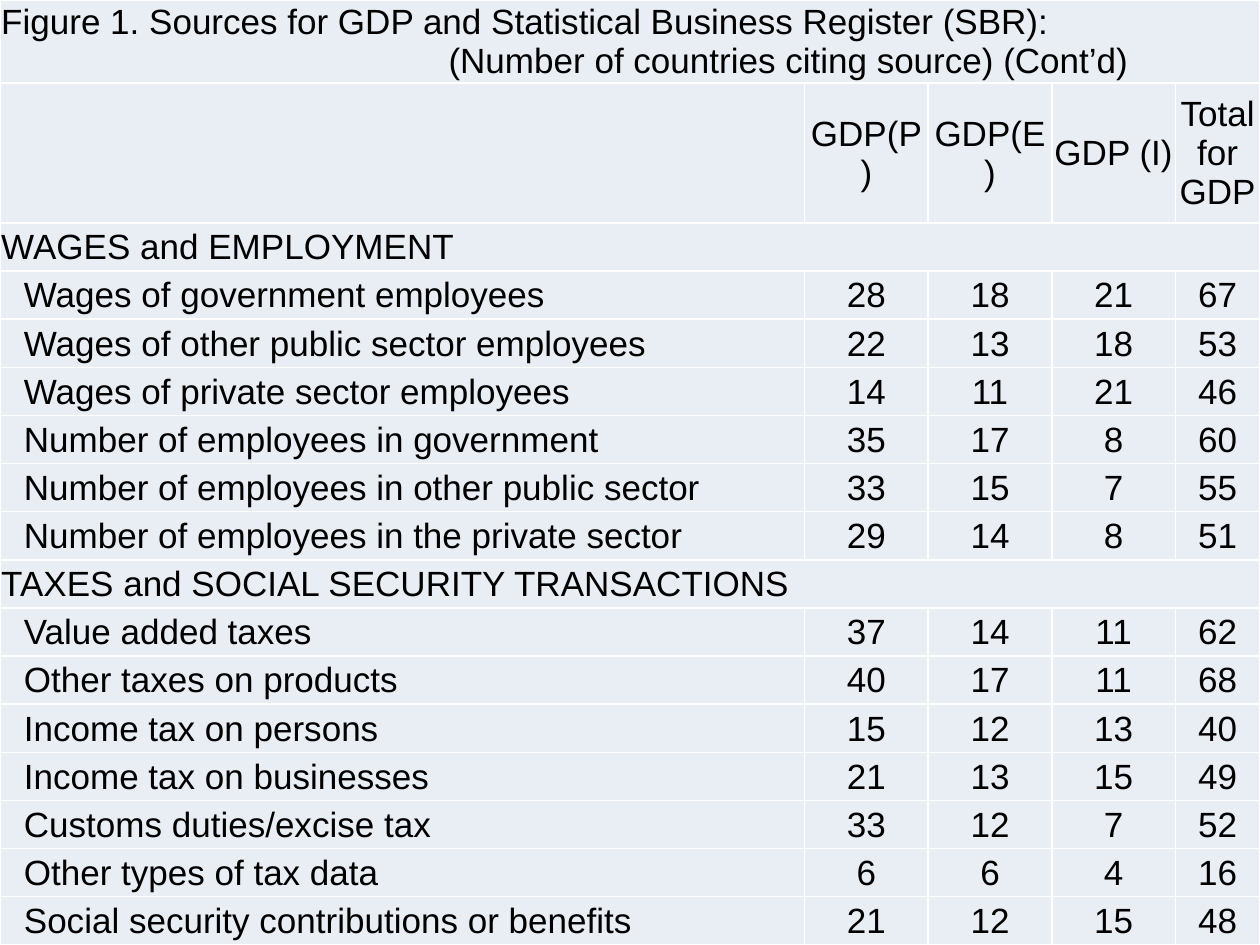
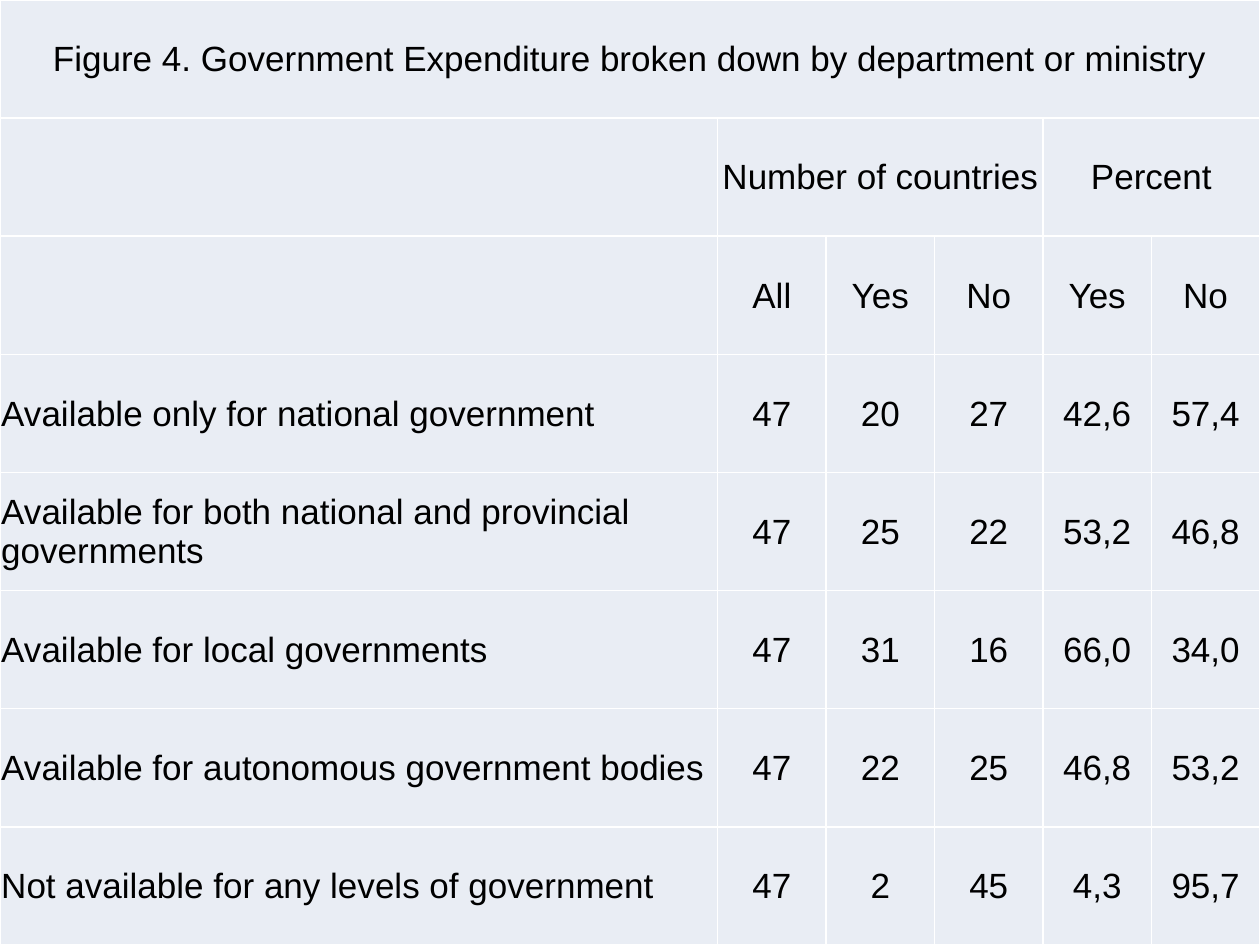
from lxml import etree
from pptx import Presentation, util as u
from pptx.dml.color import RGBColor
from pptx.enum import text
from pptx.oxml.ns import qn

WIDTH, HEIGHT = u.Inches(10), u.Inches(7.5)
FULL_SLIDE = (0, 0, WIDTH, HEIGHT)
PALE, WHITE, BLACK = "E9EDF4", "FFFFFF", "000000"
FONT, SIZE, RULE = "Arial", u.Pt(20), u.Pt(1)
INSET, ITEM_INDENT = u.Inches(0.01), u.Inches(0.19)
LEFT, CENTER = text.PP_ALIGN.LEFT, text.PP_ALIGN.CENTER

SOURCE_TITLE = ("Figure 1. Sources for GDP and Statistical Business Register (SBR):",
                "(Number of countries citing source) (Cont’d)")
SOURCE_HEADS = ("GDP(P)", "GDP(E)", "GDP (I)", "Total for GDP")
SOURCE_GROUPS = {
    "WAGES and EMPLOYMENT": [
        ("Wages of government employees", 28, 18, 21, 67),
        ("Wages of other public sector employees", 22, 13, 18, 53),
        ("Wages of private sector employees", 14, 11, 21, 46),
        ("Number of employees in government", 35, 17, 8, 60),
        ("Number of employees in other public sector", 33, 15, 7, 55),
        ("Number of employees in the private sector", 29, 14, 8, 51),
    ],
    "TAXES and SOCIAL SECURITY TRANSACTIONS": [
        ("Value added taxes", 37, 14, 11, 62),
        ("Other taxes on products", 40, 17, 11, 68),
        ("Income tax on persons", 15, 12, 13, 40),
        ("Income tax on businesses", 21, 13, 15, 49),
        ("Customs duties/excise tax", 33, 12, 7, 52),
        ("Other types of tax data", 6, 6, 4, 16),
        ("Social security contributions or benefits", 21, 12, 15, 48),
    ],
}

EXPENDITURE_TITLE = "Figure 4. Government Expenditure broken down by department or ministry"
EXPENDITURE_HEADS = ("All", "Yes", "No", "Yes", "No")
EXPENDITURE_ROWS = [
    ("Available only for national government", "47", "20", "27", "42,6", "57,4"),
    ("Available for both national and provincial governments", "47", "25", "22", "53,2", "46,8"),
    ("Available for local governments", "47", "31", "16", "66,0", "34,0"),
    ("Available for autonomous government bodies", "47", "22", "25", "46,8", "53,2"),
    ("Not available for any levels of government", "47", "2", "45", "4,3", "95,7"),
]


def color(hex_code):
    return RGBColor.from_string(hex_code)


def rule_cell(cell):
    """Draw the white rule on all four sides; must precede the cell's fill."""
    properties = cell._tc.get_or_add_tcPr()
    for side in ("lnL", "lnR", "lnT", "lnB"):
        line = etree.SubElement(properties, qn(f"a:{side}"), w=str(RULE))
        fill = etree.SubElement(line, qn("a:solidFill"))
        etree.SubElement(fill, qn("a:srgbClr"), val=WHITE)


def add_grid(slide, box, column_shares, row_shares):
    """Add a pale table whose columns and rows divide the box by their shares."""
    grid = slide.shapes.add_table(len(row_shares), len(column_shares), *box).table
    grid.first_row = grid.horz_banding = False
    for column, share in zip(grid.columns, column_shares):
        column.width = int(box[2] * share / sum(column_shares))
    for row, share in zip(grid.rows, row_shares):
        row.height = int(box[3] * share / sum(row_shares))
    for cell in grid.iter_cells():
        rule_cell(cell)
        cell.fill.solid()
        cell.fill.fore_color.rgb = color(PALE)
        cell.vertical_anchor = text.MSO_ANCHOR.MIDDLE
        cell.margin_left = cell.margin_top = cell.margin_right = INSET
        cell.margin_bottom = 0
    return grid


def write(paragraph, words, align):
    paragraph.alignment = align
    run = paragraph.add_run()
    run.text = str(words)
    run.font.name, run.font.size = FONT, SIZE
    run.font.color.rgb = color(BLACK)


def write_cell(grid, row, column, words, align=CENTER, span=1):
    cell = grid.cell(row, column)
    if span > 1:
        cell.merge(grid.cell(row, column + span - 1))
    write(cell.text_frame.paragraphs[0], words, align)
    return cell


def write_figures(grid, row, figures):
    for column, figure in enumerate(figures, 1):
        write_cell(grid, row, column, figure)


def sources_table(slide, box):
    body_rows = sum(1 + len(items) for items in SOURCE_GROUPS.values())
    body_share = (7.5 - 0.66 - 1.11) / body_rows
    grid = add_grid(slide, box, [6.38, 0.98, 0.98, 0.98, 0.67],
                    [0.66, 1.11] + [body_share] * body_rows)
    title = write_cell(grid, 0, 0, SOURCE_TITLE[0], LEFT, span=5)
    subtitle = title.text_frame.add_paragraph()
    write(subtitle, SOURCE_TITLE[1], LEFT)
    subtitle._p.get_or_add_pPr().set("marL", str(int(box[2] * 0.355)))
    write_figures(grid, 1, SOURCE_HEADS)
    row = 2
    for group, items in SOURCE_GROUPS.items():
        write_cell(grid, row, 0, group, LEFT, span=5)
        for row, (item, *counts) in enumerate(items, row + 1):
            write_cell(grid, row, 0, item, LEFT).margin_left = ITEM_INDENT
            write_figures(grid, row, counts)
        row += 1


def expenditure_table(slide, box):
    grid = add_grid(slide, box, [5.69] + [0.86] * 5, [1] * (3 + len(EXPENDITURE_ROWS)))
    write_cell(grid, 0, 0, EXPENDITURE_TITLE, span=6)
    write_cell(grid, 1, 1, "Number of countries", span=3)
    write_cell(grid, 1, 4, "Percent", span=2)
    write_figures(grid, 2, EXPENDITURE_HEADS)
    for row, (level, *figures) in enumerate(EXPENDITURE_ROWS, 3):
        write_cell(grid, row, 0, level, LEFT)
        write_figures(grid, row, figures)


def main():
    deck = Presentation()
    deck.slide_width, deck.slide_height = WIDTH, HEIGHT
    blank = deck.slide_layouts[6]
    for build in (sources_table, expenditure_table):
        build(deck.slides.add_slide(blank), FULL_SLIDE)
    deck.save("out.pptx")


if __name__ == "__main__":
    main()
